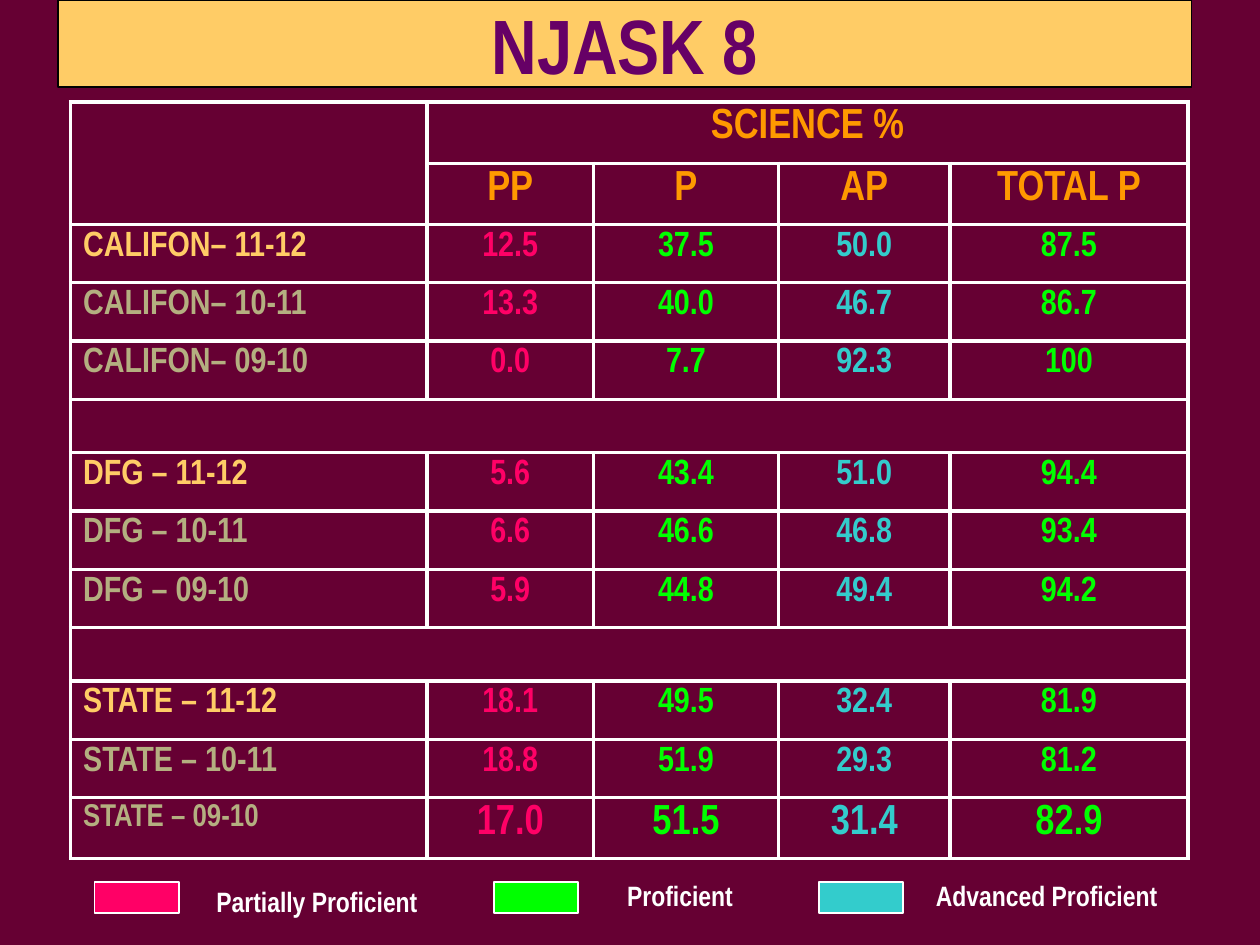
"""Build the NJASK 8 science results slide."""
from typing import NamedTuple

from lxml import etree
from pptx import Presentation
from pptx import util as u
from pptx.dml.color import RGBColor
from pptx.enum import shapes, text
from pptx.oxml.ns import qn

WIDTH, HEIGHT = u.Inches(10), u.Inches(7.5)
FONT = "Arial Narrow"
MAROON, PURPLE, WHITE, BLACK = "660033", "660066", "FFFFFF", "000000"
GOLD, KHAKI, ORANGE = "FFCC66", "B4AF80", "FF9900"
PINK, GREEN, TEAL = "FF0066", "00FF00", "33CCCC"
SCORE_COLORS = (PINK, GREEN, TEAL, GREEN)
COLUMN_SHARES = (28.3, 13.2, 14.7, 13.6, 18.9)
HEADER_SHARE, SCORE_SHARE, GAP_SHARE = 6.48, 6.17, 5.65


class Box(NamedTuple):
    """Left, top, width and height as percentages of the slide."""
    left: float
    top: float
    width: float
    height: float


class Group(NamedTuple):
    """A district or state with its scores, latest year first."""
    label: str
    scores: tuple


class Key(NamedTuple):
    """A legend swatch and its label."""
    label: str
    color: str
    swatch_left: float
    label_box: Box


GROUPS = (
    Group("CALIFON–", (("12.5", "37.5", "50.0", "87.5"),
                       ("13.3", "40.0", "46.7", "86.7"),
                       ("0.0", "7.7", "92.3", "100"))),
    Group("DFG –", (("5.6", "43.4", "51.0", "94.4"),
                    ("6.6", "46.6", "46.8", "93.4"),
                    ("5.9", "44.8", "49.4", "94.2"))),
    Group("STATE –", (("18.1", "49.5", "32.4", "81.9"),
                      ("18.8", "51.9", "29.3", "81.2"),
                      ("17.0", "51.5", "31.4", "82.9"))),
)
YEARS = ("11-12", "10-11", "09-10")
KEYS = (
    Key("Partially Proficient", PINK, 7.5, Box(16.2, 92.93, 18, 4.93)),
    Key("Proficient", GREEN, 39.2, Box(48.8, 92.27, 10.4, 4.93)),
    Key("Advanced Proficient", TEAL, 65, Box(73.3, 92.27, 19.6, 4.93)),
)


def rgb(color: str) -> RGBColor:
    """Turn a hex string into a colour."""
    return RGBColor.from_string(color)


def across(share: float) -> int:
    """Length of a percentage of the slide's width."""
    return int(WIDTH * share / 100)


def down(share: float) -> int:
    """Length of a percentage of the slide's height."""
    return int(HEIGHT * share / 100)


def place(box: Box) -> tuple:
    """Convert a box of shares to slide lengths."""
    return across(box.left), down(box.top), across(box.width), down(box.height)


def write(frame, words: str, size: float, color: str, centred: bool = False) -> None:
    """Put one bold paragraph in a text frame."""
    paragraph = frame.paragraphs[0]
    paragraph.text = words
    paragraph.alignment = text.PP_ALIGN.CENTER if centred else text.PP_ALIGN.LEFT
    font = paragraph.font
    font.name, font.size, font.bold = FONT, u.Pt(size), True
    font.color.rgb = rgb(color)


def draw_rectangle(slide, box: Box, fill: str, outline: str, weight: float):
    """Draw a flat outlined rectangle."""
    rectangle = slide.shapes.add_shape(shapes.MSO_SHAPE.RECTANGLE, *place(box))
    rectangle.shadow.inherit = False
    rectangle.fill.solid()
    rectangle.fill.fore_color.rgb = rgb(fill)
    rectangle.line.color.rgb = rgb(outline)
    rectangle.line.width = u.Pt(weight)
    return rectangle


def style_cell(cell) -> None:
    """Give a cell white borders and no fill."""
    properties = cell._tc.get_or_add_tcPr()
    for side in ("a:lnL", "a:lnR", "a:lnT", "a:lnB"):
        border = etree.SubElement(properties, qn(side), w=str(u.Pt(2.25)))
        paint = etree.SubElement(border, qn("a:solidFill"))
        etree.SubElement(paint, qn("a:srgbClr"), val=WHITE)
    cell.fill.background()


def draw_scores(slide) -> None:
    """Draw the table of science percentages."""
    row_shares = [HEADER_SHARE] * 2
    for group in GROUPS:
        row_shares += [SCORE_SHARE] * len(group.scores) + [GAP_SHARE]
    row_shares[-2:] = [HEADER_SHARE]
    box = Box(5.6, 10.8, sum(COLUMN_SHARES), sum(row_shares))
    table = slide.shapes.add_table(len(row_shares), len(COLUMN_SHARES), *place(box)).table
    table.first_row = table.horz_banding = False
    for column, share in zip(table.columns, COLUMN_SHARES):
        column.width = across(share)
    for row, share in zip(table.rows, row_shares):
        row.height = down(share)
    for cell in table.iter_cells():
        style_cell(cell)

    table.cell(0, 0).merge(table.cell(1, 0))
    table.cell(0, 1).merge(table.cell(0, 4))
    write(table.cell(0, 1).text_frame, "SCIENCE %", 24, ORANGE, True)
    for column, heading in enumerate(("PP", "P", "AP", "TOTAL P"), 1):
        write(table.cell(1, column).text_frame, heading, 24, ORANGE, True)

    last = len(row_shares) - 1
    for index, group in enumerate(GROUPS):
        top = 2 + index * (len(YEARS) + 1)
        if index:
            table.cell(top - 1, 0).merge(table.cell(top - 1, 4))
        for row, (year, scores) in enumerate(zip(YEARS, group.scores), top):
            label_size, score_size = (18, 24) if row == last else (20, 20)
            label_color = GOLD if row == top else KHAKI
            write(table.cell(row, 0).text_frame, f"{group.label} {year}",
                  label_size, label_color)
            for column, (score, color) in enumerate(zip(scores, SCORE_COLORS), 1):
                write(table.cell(row, column).text_frame, score, score_size, color, True)


def draw_key(slide, key: Key) -> None:
    """Draw one legend entry."""
    draw_rectangle(slide, Box(key.swatch_left, 93.33, 6.7, 3.33), key.color, WHITE, 1)
    label = slide.shapes.add_textbox(*place(key.label_box)).text_frame
    label.word_wrap = False
    label.auto_size = text.MSO_AUTO_SIZE.SHAPE_TO_FIT_TEXT
    write(label, key.label, 16, WHITE)


def main() -> None:
    """Assemble and save the slide."""
    deck = Presentation()
    deck.slide_width, deck.slide_height = WIDTH, HEIGHT
    slide = deck.slides.add_slide(deck.slide_layouts[6])
    slide.background.fill.solid()
    slide.background.fill.fore_color.rgb = rgb(MAROON)
    title = draw_rectangle(slide, Box(4.6, 0, 90, 9.2), GOLD, BLACK, 0.75).text_frame
    title.vertical_anchor = text.MSO_ANCHOR.MIDDLE
    write(title, "NJASK 8", 44, PURPLE, True)
    draw_scores(slide)
    for key in KEYS:
        draw_key(slide, key)
    deck.save("out.pptx")


if __name__ == "__main__":
    main()
